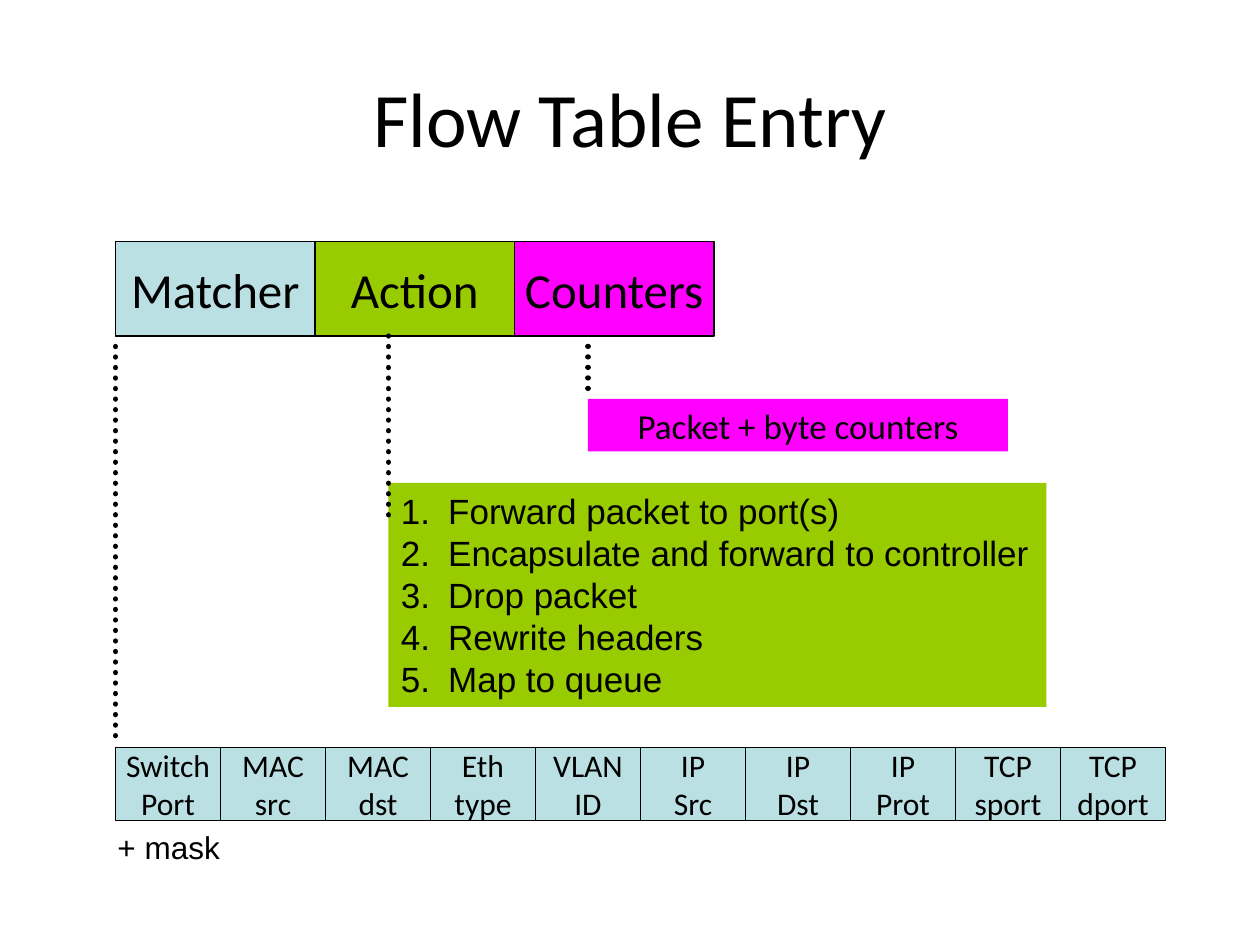
from lxml import etree
from pptx import Presentation
from pptx.dml.color import RGBColor
from pptx.enum.dml import MSO_LINE
from pptx.enum.shapes import MSO_CONNECTOR, MSO_SHAPE
from pptx.enum.text import MSO_ANCHOR, MSO_AUTO_SIZE, PP_ALIGN
from pptx.oxml.ns import qn
from pptx.util import Pt

RECT, STRAIGHT, DOTTED = MSO_SHAPE.RECTANGLE, MSO_CONNECTOR.STRAIGHT, MSO_LINE.ROUND_DOT
TOP, MIDDLE = MSO_ANCHOR.TOP, MSO_ANCHOR.MIDDLE
LEFT, CENTER = PP_ALIGN.LEFT, PP_ALIGN.CENTER
GROW = MSO_AUTO_SIZE.SHAPE_TO_FIT_TEXT

# Content
COLORS = {"black": "000000", "match": "BBE0E3", "action": "99CC00", "count": "FF00FF"}
TITLE = "Flow Table Entry"
ENTRY = [("Matcher", "match"), ("Action", "action"), ("Counters", "count")]
FIELDS = [("Switch", "Port"), ("MAC", "src"), ("MAC", "dst"), ("Eth", "type"),
          ("VLAN", "ID"), ("IP", "Src"), ("IP", "Dst"), ("IP", "Prot"),
          ("TCP", "sport"), ("TCP", "dport")]
ACTIONS = ["Forward packet to port(s)", "Encapsulate and forward to controller",
           "Drop packet", "Rewrite headers", "Map to queue"]
COUNTERS = "Packet + byte counters"
MASK = "+ mask"

# Layout in points
ROW_X = 66
ENTRY_Y, ENTRY_W, ENTRY_H = 138, 114, 54
FIELD_Y, FIELD_W, FIELD_H = 427, 60, 42
ACTION_X, COUNT_X = 222, 336
LEADERS = [(ROW_X, 198, 426), (ACTION_X, 192, 300), (COUNT_X, 222, 192)]

prs = Presentation()
prs.slide_width, prs.slide_height = Pt(720), Pt(540)
s = prs.slides.add_slide(prs.slide_layouts[6])


def rgb(name):
    return RGBColor.from_string(COLORS[name])


def write(sp, lines, size, font="Calibri", align=CENTER, anchor=MIDDLE, wrap=False):
    tf = sp.text_frame
    tf.word_wrap, tf.vertical_anchor = wrap, anchor
    for i, text in enumerate(lines):
        p = tf.paragraphs[0] if i == 0 else tf.add_paragraph()
        p.alignment = align
        r = p.add_run()
        r.text = text
        r.font.size, r.font.name = Pt(size), font
        r.font.color.rgb = rgb("black")
    return tf


def box(x, y, w, h, fill, outlined=False):
    sp = s.shapes.add_shape(RECT, Pt(x), Pt(y), Pt(w), Pt(h))
    sp.shadow.inherit = False
    sp.fill.solid()
    sp.fill.fore_color.rgb = rgb(fill)
    if outlined:
        sp.line.color.rgb = rgb("black")
        sp.line.width = Pt(0.75)
    else:
        sp.line.fill.background()
    return sp


def leader(x, y1, y2):
    c = s.shapes.add_connector(STRAIGHT, Pt(x), Pt(y1), Pt(x), Pt(y2))
    c.line.color.rgb = rgb("black")
    c.line.width = Pt(3)
    c.line.dash_style = DOTTED
    c.line._get_or_add_ln().set("cap", "rnd")
    etree.SubElement(c._element.spPr, qn("a:effectLst"))


def number(p, indent):
    pPr = p._p.get_or_add_pPr()
    pPr.set("marL", str(Pt(indent)))
    pPr.set("indent", str(-Pt(indent)))
    etree.SubElement(pPr, qn("a:buFontTx"))
    etree.SubElement(pPr, qn("a:buAutoNum"), type="arabicPeriod")


# Title
write(s.shapes.add_textbox(Pt(36), Pt(21.6), Pt(648), Pt(90)), [TITLE], 44, wrap=True)

# Header fields that the matcher looks at
for i, lines in enumerate(FIELDS):
    write(box(ROW_X + i * FIELD_W, FIELD_Y, FIELD_W, FIELD_H, "match", True), lines, 18)

# Parts of the flow table entry
for i, (name, fill) in enumerate(ENTRY):
    write(box(ROW_X + i * ENTRY_W, ENTRY_Y, ENTRY_W, ENTRY_H, fill, True), [name], 28)

# Numbered list of actions
tf = write(box(ACTION_X, 276, 376, 128, "action"), ACTIONS, 20, "Arial", LEFT, TOP)
tf.auto_size = GROW
for p in tf.paragraphs:
    number(p, 27)

# Mask note
tf = write(s.shapes.add_textbox(Pt(60), Pt(469.5), Pt(73), Pt(29)),
           [MASK], 18, "Arial", LEFT, TOP)
tf.auto_size = GROW

# Counters and dotted leaders
write(box(COUNT_X, 228, 240, 30, "count"), [COUNTERS], 20)
for x, y1, y2 in LEADERS:
    leader(x, y1, y2)

prs.save("out.pptx")
